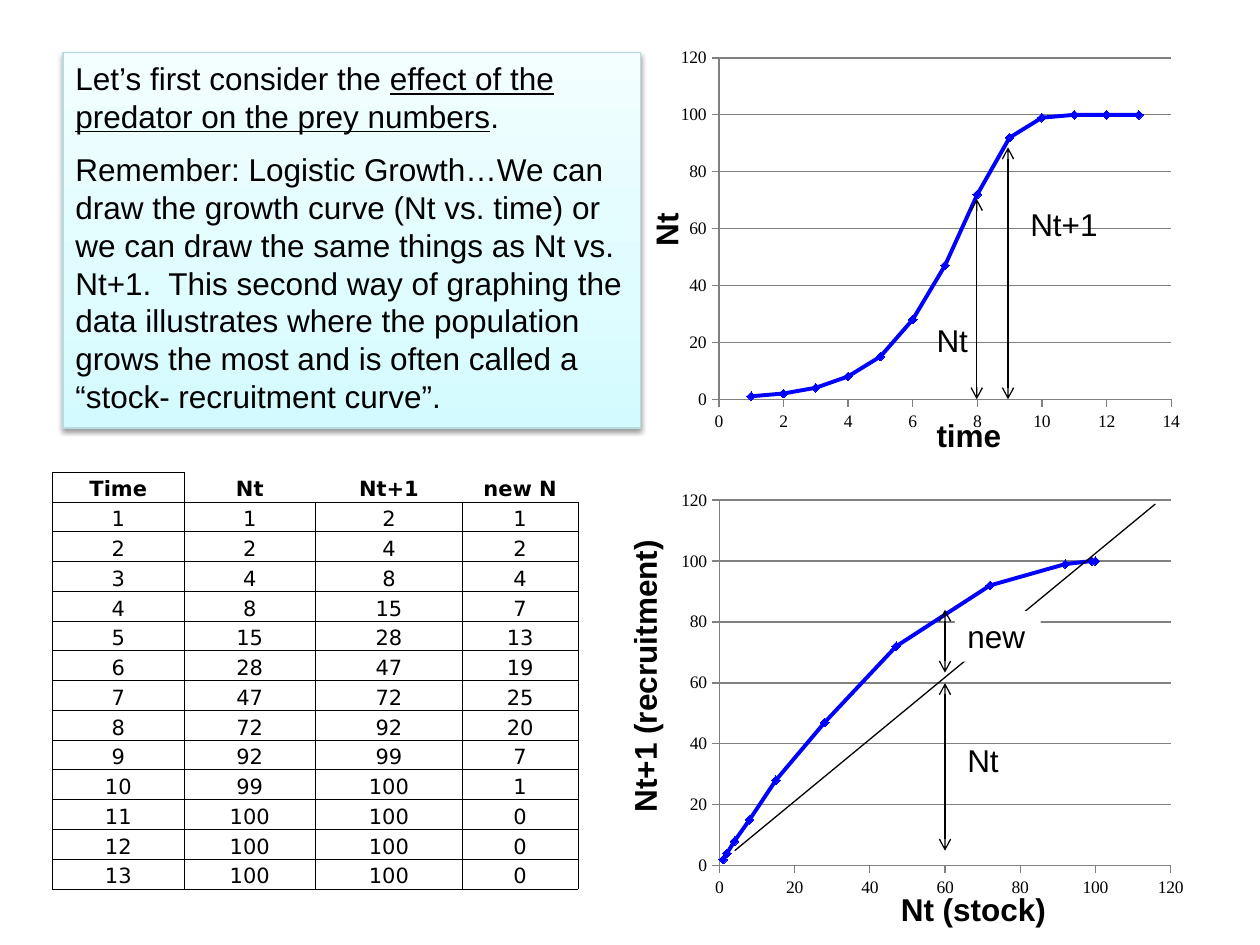
from lxml.etree import SubElement
from pptx import Presentation
from pptx.chart.data import XyChartData
from pptx.dml.color import RGBColor
from pptx.enum.chart import XL_CHART_TYPE, XL_MARKER_STYLE, XL_TICK_MARK
from pptx.enum.shapes import MSO_CONNECTOR, MSO_SHAPE
from pptx.enum.text import MSO_ANCHOR, MSO_AUTO_SIZE, PP_ALIGN
from pptx.oxml import parse_xml
from pptx.oxml.ns import nsdecls, qn
from pptx.util import Cm, Pt

BLACK = RGBColor(0x00, 0x00, 0x00)
WHITE = RGBColor(0xFF, 0xFF, 0xFF)
BLUE = RGBColor(0x00, 0x00, 0xFF)
GRID_GRAY = RGBColor(0x80, 0x80, 0x80)
PANEL_EDGE = RGBColor(0xB6, 0xDC, 0xDF)
PANEL_STOPS = ((0, RGBColor(0xD3, 0xFB, 0xFF)), (35, RGBColor(0xDF, 0xFC, 0xFF)),
               (100, RGBColor(0xF2, 0xFE, 0xFF)))

POPULATION = [1, 2, 4, 8, 15, 28, 47, 72, 92, 99, 100, 100, 100]
NEXT_POPULATION = POPULATION[1:] + [100]
NEW_INDIVIDUALS = [1, 2, 4, 7, 13, 19, 25, 20, 7, 1, 0, 0, 0]
TIMES = list(range(1, 14))
HEADINGS = ("Time", "Nt", "Nt+1", "new N")
COLUMN_WIDTHS = (2.65, 2.65, 2.96, 2.33)
ROW_HEIGHT = 0.6

INTRO = (
    (("Let’s first consider the ", False),
     ("effect of the predator on the prey numbers", True), (".", False)),
    (("Remember: Logistic Growth…We can draw the growth curve (Nt vs. time) or we can "
      "draw the same things as Nt vs. Nt+1.  This second way of graphing the data "
      "illustrates where the population grows the most and is often called a "
      "“stock- recruitment curve”.", False),),
)


def style_axis(axis, maximum, step):
    """Set the scale, ticks and line of one value axis."""
    axis.minimum_scale, axis.maximum_scale, axis.major_unit = 0, maximum, step
    axis.major_tick_mark = XL_TICK_MARK.OUTSIDE
    axis.minor_tick_mark = XL_TICK_MARK.NONE
    axis.format.line.color.rgb = GRID_GRAY
    axis.format.line.width = Pt(0.75)


def place_plot(chart, frame):
    """Fix the inner plot area as fractions of the chart."""
    plot_area = chart._chartSpace.chart.plotArea
    for old in plot_area.findall(qn("c:layout")):
        plot_area.remove(old)
    layout = parse_xml(f"<c:layout {nsdecls('c')}><c:manualLayout/></c:layout>")
    names = ("layoutTarget", "xMode", "yMode", "x", "y", "w", "h")
    for name, value in zip(names, ("inner", "edge", "edge") + frame):
        SubElement(layout[0], qn(f"c:{name}")).set("val", str(value))
    plot_area.insert(0, layout)


def add_curve(page, place, points, x_scale, frame):
    """Add a smooth scatter chart with one blue series."""
    data = XyChartData()
    series_data = data.add_series("Series 1")
    for x, y in points:
        series_data.add_data_point(x, y)
    chart = page.shapes.add_chart(XL_CHART_TYPE.XY_SCATTER_SMOOTH,
                                  *map(Cm, place), data).chart
    chart.has_legend = chart.has_title = False
    chart.font.name, chart.font.size = "Times New Roman", Pt(10)
    chart.font.color.rgb = BLACK
    chart.plots[0].vary_by_categories = False
    style_axis(chart.category_axis, *x_scale)
    style_axis(chart.value_axis, 120, 20)
    chart.category_axis.has_major_gridlines = False
    grid = chart.value_axis.major_gridlines.format.line
    grid.color.rgb, grid.width = GRID_GRAY, Pt(0.75)
    series = chart.plots[0].series[0]
    series.smooth = True
    series.format.line.color.rgb, series.format.line.width = BLUE, Pt(2.25)
    marker = series.marker
    marker.style, marker.size = XL_MARKER_STYLE.DIAMOND, 5
    marker.format.fill.solid()
    marker.format.fill.fore_color.rgb = BLUE
    marker.format.line.color.rgb, marker.format.line.width = BLUE, Pt(0.75)
    place_plot(chart, frame)


def set_font(font, name="Arial", size=18, bold=False):
    """Set a black font."""
    font.name, font.size, font.bold = name, Pt(size), bold
    font.color.rgb = BLACK


def add_intro(page):
    """Add the shaded panel with the introduction."""
    panel = page.shapes.add_shape(MSO_SHAPE.RECTANGLE, Cm(1.27), Cm(1.06),
                                  Cm(11.64), Cm(7.57))
    panel.line.color.rgb, panel.line.width = PANEL_EDGE, Pt(0.75)
    stops = "".join(f'<a:gs pos="{at * 1000}"><a:srgbClr val="{color}"/></a:gs>'
                    for at, color in PANEL_STOPS)
    properties = panel._element.spPr
    properties.insert(2, parse_xml(
        f'<a:gradFill {nsdecls("a")} rotWithShape="1"><a:gsLst>{stops}</a:gsLst>'
        '<a:lin ang="16200000" scaled="0"/></a:gradFill>'))
    properties.append(parse_xml(
        f'<a:effectLst {nsdecls("a")}><a:outerShdw blurRad="{Pt(3.1)}" dist="{Pt(1.6)}" '
        'dir="5400000" rotWithShape="0"><a:srgbClr val="000000"><a:alpha val="38000"/>'
        '</a:srgbClr></a:outerShdw></a:effectLst>'))
    frame = panel.text_frame
    frame.word_wrap = True
    frame.vertical_anchor = MSO_ANCHOR.TOP
    for index, spans in enumerate(INTRO):
        paragraph = frame.add_paragraph() if index else frame.paragraphs[0]
        paragraph.alignment = PP_ALIGN.LEFT
        if index:
            paragraph.space_before = Pt(9)
        set_font(paragraph.font)
        for text, underlined in spans:
            span = paragraph.add_run()
            span.text = text
            span.font.underline = underlined


def set_borders(cell, sides):
    """Draw the named sides of a cell and clear the others."""
    properties = cell._tc.get_or_add_tcPr()
    for index, side in enumerate("LRTB"):
        paint = ('<a:solidFill><a:srgbClr val="000000"/></a:solidFill>'
                 if side in sides else "<a:noFill/>")
        properties.insert(index, parse_xml(
            f'<a:ln{side} {nsdecls("a")} w="{Pt(0.5)}">{paint}</a:ln{side}>'))


def add_population_table(page):
    """Add the table of population sizes over time."""
    rows = [HEADINGS, *zip(TIMES, POPULATION, NEXT_POPULATION, NEW_INDIVIDUALS)]
    table = page.shapes.add_table(len(rows), len(HEADINGS), Cm(1.06), Cm(9.52),
                                  Cm(sum(COLUMN_WIDTHS)),
                                  Cm(ROW_HEIGHT * len(rows))).table
    table.first_row = table.horz_banding = False
    for column, width in zip(table.columns, COLUMN_WIDTHS):
        column.width = Cm(width)
    for row_index, values in enumerate(rows):
        table.rows[row_index].height = Cm(ROW_HEIGHT)
        for column_index, value in enumerate(values):
            cell = table.cell(row_index, column_index)
            cell.fill.background()
            open_heading = row_index == 0 and column_index > 0
            sides = ("LB" if column_index == 1 else "B") if open_heading else "LRTB"
            set_borders(cell, sides)
            cell.margin_left = cell.margin_right = cell.margin_top = Cm(0.03)
            cell.margin_bottom = 0
            cell.vertical_anchor = MSO_ANCHOR.BOTTOM
            paragraph = cell.text_frame.paragraphs[0]
            paragraph.text = str(value)
            paragraph.alignment = PP_ALIGN.CENTER
            set_font(paragraph.font, "DejaVu Sans", 12, row_index == 0)


def add_label(page, text, left, top, width, bold=False, rotation=0, fill=None):
    """Add a one-line label."""
    box = page.shapes.add_textbox(Cm(left), Cm(top), Cm(width), Cm(1.02))
    box.rotation = rotation
    if fill is not None:
        box.fill.solid()
        box.fill.fore_color.rgb = fill
    box.text_frame.word_wrap = False
    box.text_frame.auto_size = MSO_AUTO_SIZE.SHAPE_TO_FIT_TEXT
    paragraph = box.text_frame.paragraphs[0]
    paragraph.text = text
    set_font(paragraph.font, bold=bold)


def add_line(page, start, end, arrows=True):
    """Add a thin black line, with open arrowheads on request."""
    line = page.shapes.add_connector(MSO_CONNECTOR.STRAIGHT, *map(Cm, start + end))
    line.line.color.rgb, line.line.width = BLACK, Pt(0.75)
    if arrows:
        for name in ("headEnd", "tailEnd"):
            SubElement(line.line._get_or_add_ln(), qn(f"a:{name}")).set("type", "arrow")
    SubElement(line._element.spPr, qn("a:effectLst"))


def main():
    """Build the logistic growth slide."""
    deck = Presentation()
    deck.slide_width, deck.slide_height = Cm(25.4), Cm(19.05)
    page = deck.slides.add_slide(deck.slide_layouts[6])
    add_curve(page, (13.55, 9.74, 10.58, 8.57), zip(POPULATION, NEXT_POPULATION),
              (120, 20), (0.09, 0.04, 0.86, 0.86))
    add_intro(page)
    add_curve(page, (13.55, 0.85, 10.48, 8), zip(TIMES, POPULATION),
              (14, 2), (0.09, 0.04, 0.87, 0.86))
    add_population_table(page)
    add_label(page, "Nt (stock)", 17.91, 17.81, 3.48, bold=True)
    add_label(page, "Nt+1 (recruitment)", 9.96, 13.08, 6.07, bold=True, rotation=270)
    add_label(page, "time", 18.63, 8.26, 1.83, bold=True)
    add_label(page, "Nt", 12.83, 4.11, 1.19, bold=True, rotation=270)
    add_line(page, (14.81, 17.15), (23.29, 10.16), arrows=False)
    for x, top, bottom in ((19.05, 13.77, 17.15), (19.05, 12.29, 13.56),
                           (19.69, 4.01, 8.05), (20.32, 2.97, 8.05)):
        add_line(page, (x, top), (x, bottom))
    add_label(page, "Nt", 19.25, 14.81, 1.14)
    add_label(page, "new", 19.25, 12.32, 1.73, fill=WHITE)
    add_label(page, "Nt", 18.63, 6.35, 1.14)
    add_label(page, "Nt+1", 20.52, 4.01, 1.88)
    deck.save("out.pptx")


if __name__ == "__main__":
    main()
